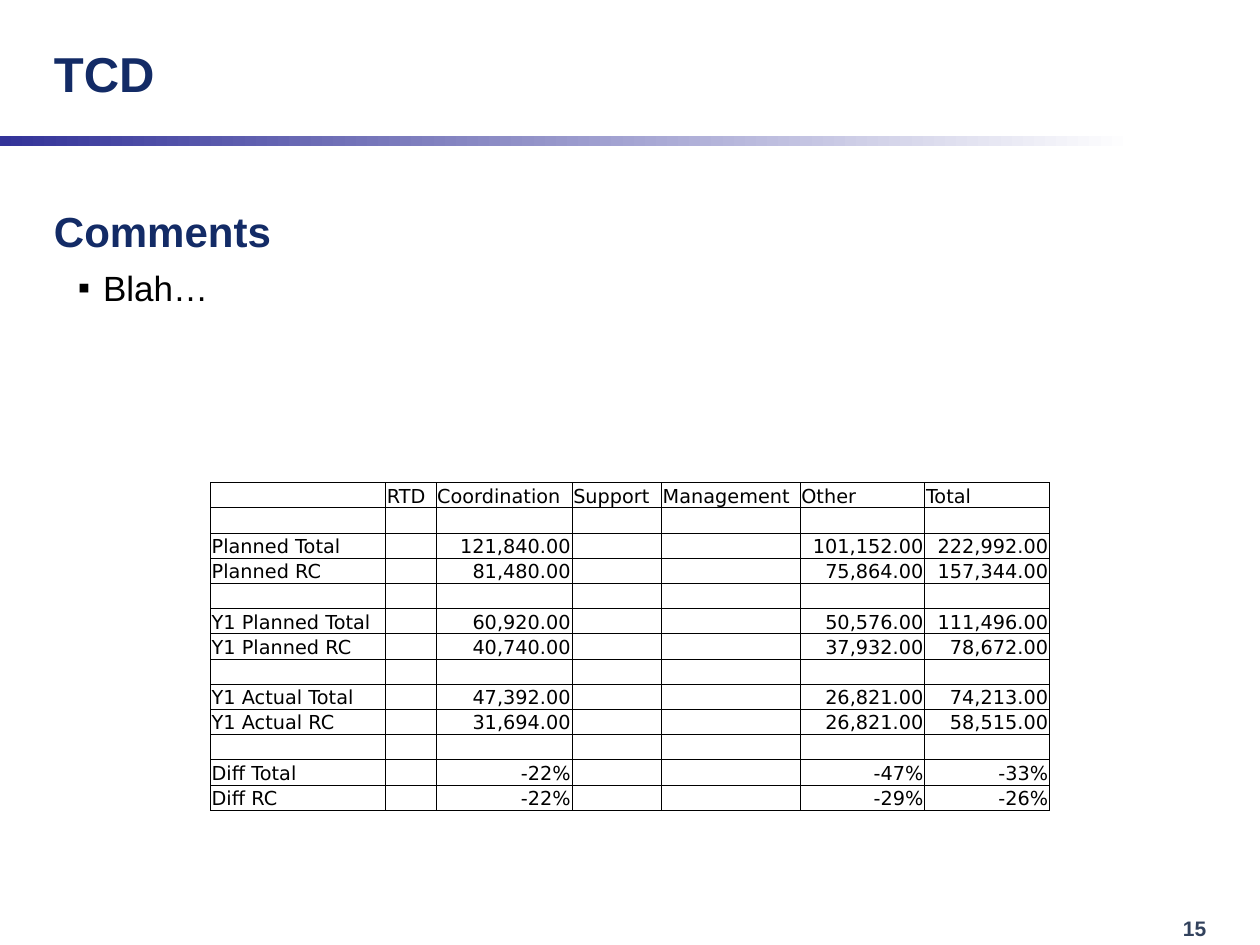
from dataclasses import dataclass

from lxml.etree import SubElement
from pptx import Presentation
from pptx.dml.color import RGBColor as RGB
from pptx.enum.shapes import MSO_SHAPE as SHAPE
from pptx.enum.text import MSO_ANCHOR as ANCHOR, PP_ALIGN as ALIGN
from pptx.oxml.ns import qn
from pptx.util import Inches, Pt


@dataclass(frozen=True)
class Theme:
    navy: str = "132B66"
    slate: str = "32425D"
    indigo: str = "333399"
    white: str = "FFFFFF"
    black: str = "000000"
    font: str = "Arial"
    table_font: str = "DejaVu Sans"
    title: int = 28
    heading: int = 24
    body: int = 20
    number: int = 12
    cell: int = 11
    border: float = 0.5


def write(p, text, font="Arial", size=20, color="000000", bold=False,
          align=ALIGN.LEFT, before=0, left=0, hang=0, bullet=None):
    p.alignment = align
    p.space_before = Pt(before)
    pPr = p._p.get_or_add_pPr()
    pPr.set("marL", str(Inches(left)))
    pPr.set("indent", str(-Inches(hang)))
    if bullet:
        SubElement(pPr, qn("a:buFont"), typeface=font)
        SubElement(pPr, qn("a:buChar"), char=bullet)
    if not text:
        SubElement(p._p, qn("a:endParaRPr"), sz=str(size * 100))
        return
    r = p.add_run()
    r.text = text
    r.font.name, r.font.size, r.font.bold = font, Pt(size), bold
    r.font.color.rgb = RGB.from_string(color)


class Deck:
    """Draws themed elements on the current slide."""

    def __init__(self, theme):
        self.theme = theme
        self.prs = Presentation()
        self.prs.slide_width, self.prs.slide_height = Inches(10), Inches(7.5)
        self.s = self.prs.slides.add_slide(self.prs.slide_layouts[6])

    def text(self, box, paragraphs, anchor=ANCHOR.TOP, wrap=True):
        tf = self.s.shapes.add_textbox(*map(Inches, box)).text_frame
        tf.word_wrap, tf.vertical_anchor = wrap, anchor
        for i, (text, style) in enumerate(paragraphs):
            p = tf.add_paragraph() if i else tf.paragraphs[0]
            write(p, text, **style)

    def gradient_bar(self, box, start, end, stop):
        sp = self.s.shapes.add_shape(SHAPE.RECTANGLE, *map(Inches, box))
        sp.shadow.inherit = False
        sp.line.fill.background()
        sp.fill.gradient()
        sp.fill.gradient_angle = 0
        stops = sp.fill.gradient_stops
        for grad, color, place in zip(stops, (start, end), (0, stop)):
            grad.color.rgb = RGB.from_string(color)
            grad.position = place

    def border(self, cell):
        tcPr = cell._tc.get_or_add_tcPr()
        for side in ("lnL", "lnR", "lnT", "lnB"):
            ln = SubElement(tcPr, qn(f"a:{side}"), w=str(Pt(self.theme.border)))
            fill = SubElement(ln, qn("a:solidFill"))
            SubElement(fill, qn("a:srgbClr"), val=self.theme.black)

    def table(self, left, top, widths, row_height, rows):
        t = self.theme
        size = sum(widths), row_height * len(rows)
        tbl = self.s.shapes.add_table(
            len(rows), len(widths), *map(Inches, (left, top, *size))).table
        tbl.first_row = tbl.horz_banding = False
        for col, width in zip(tbl.columns, widths):
            col.width = Inches(width)
        for i, values in enumerate(rows):
            tbl.rows[i].height = Inches(row_height)
            for j in range(len(widths)):
                cell = tbl.cell(i, j)
                cell.margin_left = cell.margin_right = cell.margin_top = Inches(0.01)
                cell.margin_bottom = 0
                cell.vertical_anchor = ANCHOR.BOTTOM
                self.border(cell)
                cell.fill.background()
                write(cell.text_frame.paragraphs[0], values.get(j, ""),
                      font=t.table_font, size=t.cell, color=t.black,
                      align=ALIGN.RIGHT if i and j else ALIGN.LEFT)


HEADER = ("", "RTD", "Coordination", "Support", "Management", "Other", "Total")
FILLED = (0, 2, 5, 6)
GROUPS = (
    (("Planned Total", "121,840.00", "101,152.00", "222,992.00"),
     ("Planned RC", "81,480.00", "75,864.00", "157,344.00")),
    (("Y1 Planned Total", "60,920.00", "50,576.00", "111,496.00"),
     ("Y1 Planned RC", "40,740.00", "37,932.00", "78,672.00")),
    (("Y1 Actual Total", "47,392.00", "26,821.00", "74,213.00"),
     ("Y1 Actual RC", "31,694.00", "26,821.00", "58,515.00")),
    (("Diff Total", "-22%", "-47%", "-33%"),
     ("Diff RC", "-22%", "-29%", "-26%")),
)


def main():
    t = Theme()
    deck = Deck(t)
    deck.text((9.29, 7.22, 0.64, 0.3),
              [("15", dict(size=t.number, color=t.slate, bold=True))], wrap=False)
    deck.gradient_bar((0, 1.08, 10, 0.08), t.indigo, t.white, 0.9)
    deck.text((0.33, 0.08, 7.08, 1),
              [("TCD", dict(size=t.title, color=t.navy, bold=True))], ANCHOR.MIDDLE)
    deck.text((0.33, 1.58, 9.33, 5.58), [
        ("Comments", dict(size=t.heading, color=t.navy, bold=True,
                          left=0.38, hang=0.38)),
        ("Blah…", dict(size=t.body, color=t.black, before=6,
                       left=0.39, hang=0.2, bullet="▪")),
    ])
    rows = [dict(enumerate(HEADER))]
    for group in GROUPS:
        rows.append({})
        rows.extend(dict(zip(FILLED, values)) for values in group)
    deck.table(1.67, 3.83, (1.39, 0.4, 1.08, 0.71, 1.1, 0.99, 0.99), 0.2, rows)
    deck.prs.save("out.pptx")


if __name__ == "__main__":
    main()
